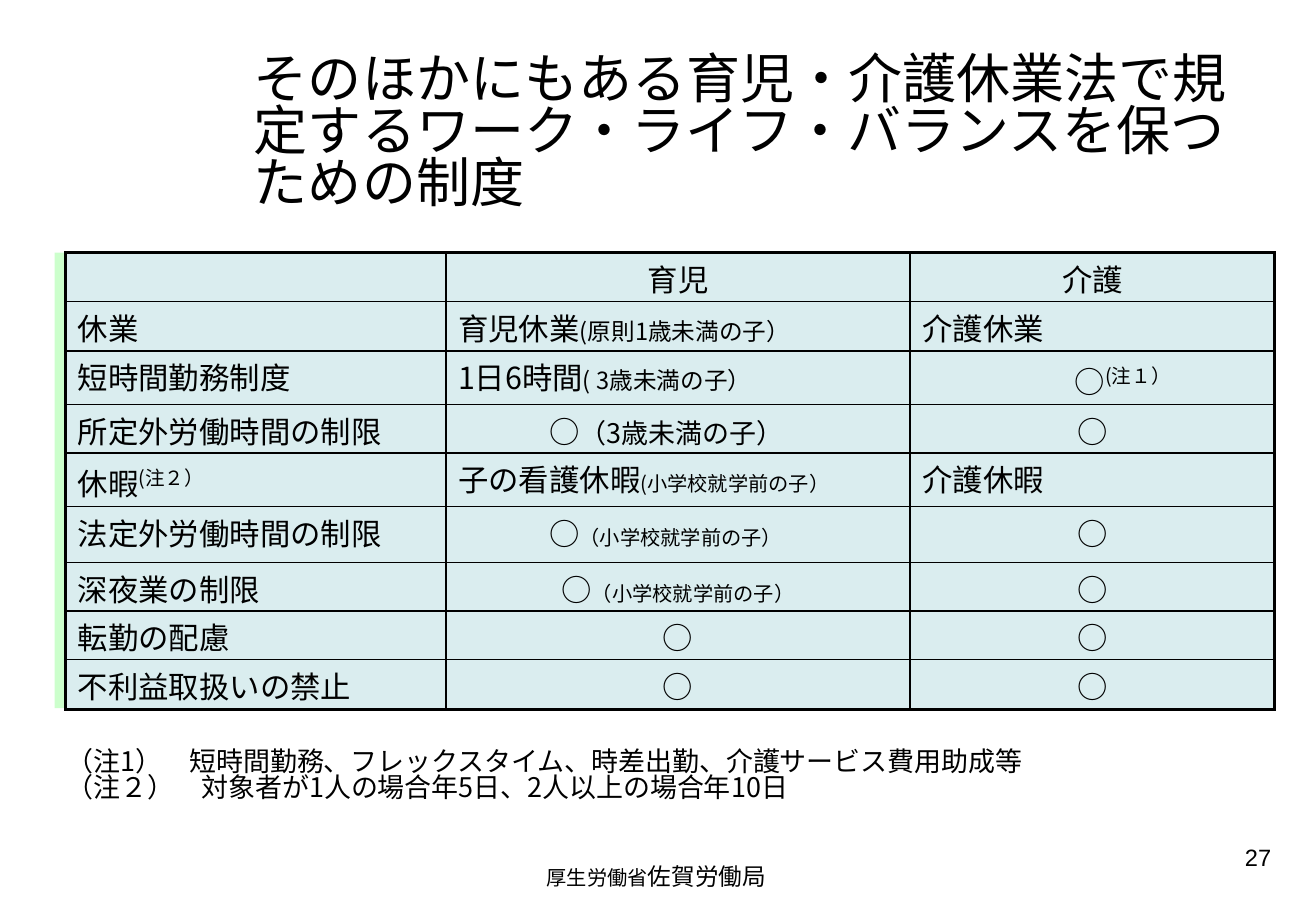
from lxml.etree import SubElement
from pptx import Presentation
from pptx.dml.color import RGBColor
from pptx.enum.shapes import MSO_SHAPE
from pptx.enum.text import MSO_ANCHOR, MSO_AUTO_SIZE, PP_ALIGN
from pptx.oxml import parse_xml
from pptx.oxml.ns import nsdecls, qn
from pptx.util import Inches, Pt

BLACK = RGBColor(0x00, 0x00, 0x00)
PALE_BLUE = RGBColor(0xDA, 0xED, 0xEF)
PALE_GREEN = RGBColor(0xCC, 0xFF, 0xCC)
LATIN = "Arial"
JAPANESE = "Noto Sans CJK JP"
LEFT, CENTER, RIGHT = PP_ALIGN.LEFT, PP_ALIGN.CENTER, PP_ALIGN.RIGHT

CIRCLE = [("○", 18)]
COLUMNS = [3.13, 3.82, 3]
ROW_HEIGHTS = [0.4, 0.41, 0.44, 0.4, 0.44, 0.46, 0.4, 0.4, 0.41]
SYSTEMS = [
    ([], ([("育児", 18)], CENTER), ([("介護", 18)], CENTER)),
    ([("休業", 18)], ([("育児休業", 18), ("(原則1歳未満の子）", 14)], LEFT),
     ([("介護休業", 18)], LEFT)),
    ([("短時間勤務制度", 18)], ([("1日6時間", 18), ("( 3歳未満の子）", 14)], LEFT),
     (CIRCLE + [("(注１）", 20, True)], CENTER, 0.5)),
    ([("所定外労働時間の制限", 18)], (CIRCLE + [("（3歳未満の子）", 16)], LEFT, 0.75),
     (CIRCLE, CENTER)),
    ([("休暇", 18), ("(注２）", 20, True)],
     ([("子の看護休暇", 18), ("(小学校就学前の子）", 12)], LEFT),
     ([("介護休暇", 18)], LEFT)),
    ([("法定外労働時間の制限", 18)], (CIRCLE + [("（小学校就学前の子）", 12)], LEFT, 0.75),
     (CIRCLE, CENTER)),
    ([("深夜業の制限", 18)], (CIRCLE + [("（小学校就学前の子）", 12)], CENTER),
     (CIRCLE, CENTER)),
    ([("転勤の配慮", 18)], (CIRCLE, CENTER), (CIRCLE, CENTER)),
    ([("不利益取扱いの禁止", 18)], (CIRCLE, CENTER), (CIRCLE, CENTER)),
]
NOTES = [
    "（注1）　短時間勤務、フレックスタイム、時差出勤、介護サービス費用助成等",
    "（注２）　対象者が1人の場合年5日、2人以上の場合年10日",
]


class SlideBuilder:
    def __init__(self, presentation):
        self.slide = presentation.slides.add_slide(presentation.slide_layouts[1])

    def place(self, shape, left, top, width, height):
        shape.left, shape.top = Inches(left), Inches(top)
        shape.width, shape.height = Inches(width), Inches(height)

    def style_run(self, run, size, font=JAPANESE, raised=False):
        run.font.size = Pt(size)
        run.font.name = font
        run.font.color.rgb = BLACK
        properties = run._r.get_or_add_rPr()
        if font == JAPANESE:
            SubElement(properties, qn("a:ea")).set("typeface", font)
        if raised:
            properties.set("baseline", "30000")

    def add_pieces(self, paragraph, pieces, font=JAPANESE, align=LEFT):
        paragraph.alignment = align
        for words, size, *raised in pieces:
            run = paragraph.add_run()
            run.text = words
            self.style_run(run, size, font, bool(raised))

    def title(self, words, box, size):
        heading = self.slide.shapes.title
        self.place(heading, *box)
        frame = heading.text_frame
        frame.auto_size = MSO_AUTO_SIZE.NONE
        frame.vertical_anchor = MSO_ANCHOR.MIDDLE
        self.add_pieces(frame.paragraphs[0], [(words, size)], LATIN)
        frame.paragraphs[0].line_spacing = 0.8

    def notes(self, lines, box, size):
        body = self.slide.placeholders[1]
        self.place(body, *box)
        frame = body.text_frame
        frame.auto_size = MSO_AUTO_SIZE.NONE
        frame.vertical_anchor = MSO_ANCHOR.TOP
        frame.text = "\n".join(lines)
        for paragraph in frame.paragraphs:
            paragraph.line_spacing = 0.8
            paragraph.space_before = Pt(0)
            properties = paragraph._p.get_or_add_pPr()
            properties.set("marL", str(Inches(0.67)))
            properties.set("indent", str(-Inches(0.67)))
            SubElement(properties, qn("a:buNone"))
            self.style_run(paragraph.runs[0], size)

    def panel(self, box, color):
        panel = self.slide.shapes.add_shape(MSO_SHAPE.RECTANGLE, *map(Inches, box))
        panel.shadow.inherit = False
        panel.fill.solid()
        panel.fill.fore_color.rgb = color
        panel.line.fill.background()

    def label(self, pieces, box, align=LEFT):
        frame = self.slide.shapes.add_textbox(*map(Inches, box)).text_frame
        frame.word_wrap = True
        self.add_pieces(frame.paragraphs[0], pieces, LATIN, align)

    def borders(self, cell, outer_edges):
        properties = cell._tc.get_or_add_tcPr()
        for position, (side, outer) in enumerate(zip("LRTB", outer_edges)):
            width = Pt(2.25 if outer else 1)
            properties.insert(position, parse_xml(
                f'<a:ln{side} {nsdecls("a")} w="{width}"><a:solidFill>'
                f'<a:srgbClr val="{BLACK}"/></a:solidFill></a:ln{side}>'))

    def table(self, rows, left, top, widths, heights):
        table = self.slide.shapes.add_table(
            len(rows), len(widths), Inches(left), Inches(top),
            Inches(sum(widths)), Inches(sum(heights))).table
        table.first_row = table.horz_banding = False
        for column, width in zip(table.columns, widths):
            column.width = Inches(width)
        last_row, last_column = len(rows) - 1, len(widths) - 1
        for r, (system, childcare, care) in enumerate(rows):
            table.rows[r].height = Inches(heights[r])
            for c, (pieces, align, *indent) in enumerate([(system, LEFT), childcare, care]):
                cell = table.cell(r, c)
                cell.fill.solid()
                cell.fill.fore_color.rgb = PALE_BLUE
                cell.margin_left = Inches(0.1 + sum(indent))
                cell.margin_top, cell.margin_bottom = Inches(0.03), Inches(0)
                self.add_pieces(cell.text_frame.paragraphs[0], pieces, align=align)
                self.borders(cell, (c == 0, c == last_column, r == 0, r == last_row))


def main():
    presentation = Presentation()
    presentation.slide_width, presentation.slide_height = Inches(10.83), Inches(7.5)
    builder = SlideBuilder(presentation)
    builder.title("そのほかにもある育児・介護休業法で規定するワーク・ライフ・バランスを保つための制度",
                  (1.99, 0.3, 8.49, 1.62), 32)
    builder.panel((0.45, 2.08, 10.02, 3.75), PALE_GREEN)
    builder.notes(NOTES, (0.45, 6.13, 10.02, 0.65), 16)
    builder.label([("厚生労働省", 12), ("佐賀労働局", 14)], (4.4, 7.05, 2.44, 0.33))
    builder.table(SYSTEMS, 0.54, 2.08, COLUMNS, ROW_HEIGHTS)
    builder.label([("27", 14)], (8.03, 6.89, 2.53, 0.52), RIGHT)
    presentation.save("out.pptx")


if __name__ == "__main__":
    main()
